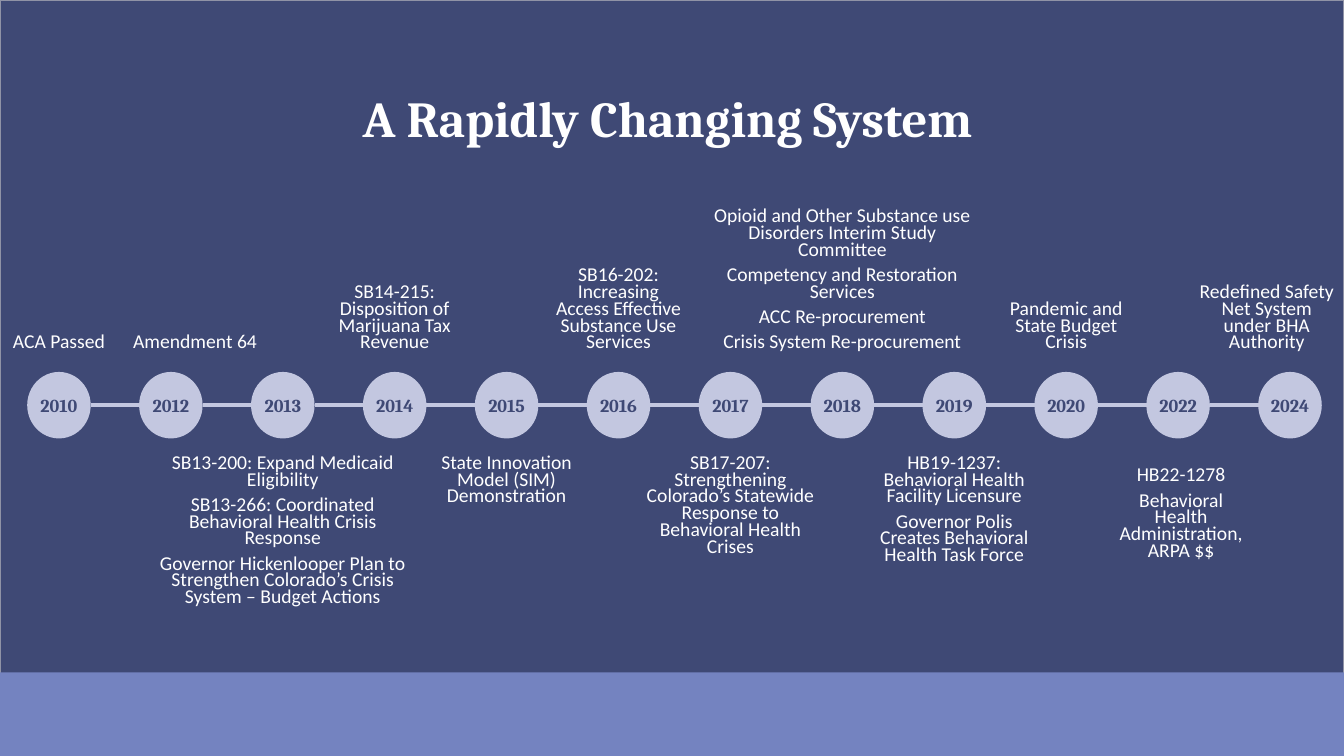
from dataclasses import dataclass

from lxml import etree
from pptx import Presentation
from pptx.dml.color import RGBColor
from pptx.enum import shapes, text
from pptx.oxml import ns
from pptx.util import Inches, Pt

NAVY = RGBColor(0x3F, 0x49, 0x75)
EDGE = RGBColor(0x90, 0x93, 0xA6)
PERIWINKLE = RGBColor(0x74, 0x83, 0xC0)
LAVENDER = RGBColor(0xC3, 0xC7, 0xE0)
WHITE = RGBColor(0xFF, 0xFF, 0xFF)

SLIDE_WIDTH, SLIDE_HEIGHT = 13.33, 7.5
BAND_HEIGHT = 0.83
CIRCLE_WIDTH, CIRCLE_HEIGHT = 0.63, 0.66
YEAR_STEP = 1.11

TOP, MIDDLE, BOTTOM = (text.MSO_ANCHOR.TOP, text.MSO_ANCHOR.MIDDLE,
                       text.MSO_ANCHOR.BOTTOM)
TITLE_FONT = {"name": "Cambria", "size": Pt(36), "bold": True}
YEAR_FONT = {"name": "Cambria", "size": Pt(13), "bold": True}
EVENT_FONT = {"name": "Calibri", "size": Pt(14)}
EVENT_SPACING = {"line_spacing": Pt(12), "space_after": Pt(6)}


@dataclass
class Event:
    """One year; top is measured from the top of the circles."""
    year: str
    lines: tuple
    top: float = -1.1
    height: float = 0.96
    width: float = 1.54
    anchor: int = BOTTOM
    shift: float = 0


def event_below(year, lines, width, height=1.14):
    return Event(year, lines, 0.79, height, width, TOP)


EVENTS = (
    Event("2010", ("ACA Passed",)),
    Event("2012", ("Amendment 64",), shift=0.24),
    event_below("2013", (
        "SB13-200: Expand Medicaid Eligibility",
        "SB13-266: Coordinated Behavioral Health Crisis Response",
        "Governor Hickenlooper Plan to Strengthen Colorado’s Crisis System – Budget Actions",
    ), 2.76, 1.61),
    Event("2014", ("SB14-215: Disposition of Marijuana Tax Revenue",)),
    event_below("2015", ("State Innovation Model (SIM) Demonstration",), 1.54),
    Event("2016", ("SB16-202: Increasing Access Effective Substance Use Services",)),
    event_below("2017", (
        "SB17-207: Strengthening Colorado’s Statewide Response to Behavioral Health Crises",
    ), 1.86),
    Event("2018", (
        "Opioid and Other Substance use Disorders Interim Study Committee",
        "Competency and Restoration Services",
        "ACC Re-procurement",
        "Crisis System Re-procurement",
    ), top=-1.75, height=1.61, width=2.8),
    event_below("2019", (
        "HB19-1237: Behavioral Health Facility Licensure",
        "Governor Polis Creates Behavioral Health Task Force",
    ), 1.86),
    Event("2020", ("Pandemic and State Budget Crisis",)),
    Event("2022", (
        "HB22-1278",
        "Behavioral Health Administration, ARPA $$",
    ), top=0.97, shift=0.03),
    Event("2024", ("Redefined Safety Net System under BHA Authority",), shift=-0.23),
)


def write_text(shape, lines, font, color, anchor, margins, spacing):
    frame = shape.text_frame
    frame.word_wrap = True
    frame.vertical_anchor = anchor
    for side, margin in zip(("left", "top", "right", "bottom"), margins):
        setattr(frame, f"margin_{side}", Inches(margin))
    for index, line in enumerate(lines):
        paragraph = frame.add_paragraph() if index else frame.paragraphs[0]
        paragraph.alignment = text.PP_ALIGN.CENTER
        for name, value in spacing.items():
            setattr(paragraph, name, value)
        run = paragraph.add_run()
        run.text = line
        for name, value in font.items():
            setattr(run.font, name, value)
        run.font.color.rgb = color


def add_filled(slide, kind, box, fill, edge=None):
    shape = slide.shapes.add_shape(kind, *map(Inches, box))
    shape.shadow.inherit = False
    shape.fill.solid()
    shape.fill.fore_color.rgb = fill
    if edge is None:
        shape.line.fill.background()
    else:
        shape.line.color.rgb = edge
        shape.line.width = Pt(1)
    return shape


def add_backdrop(slide, left, top, width, height):
    rectangle = shapes.MSO_SHAPE.RECTANGLE
    add_filled(slide, rectangle, (left, top, width, height), NAVY, EDGE)
    band_top = top + height - BAND_HEIGHT
    add_filled(slide, rectangle, (left, band_top, width, BAND_HEIGHT), PERIWINKLE)


def add_title(slide, left, top, width, height):
    title = slide.shapes.add_textbox(*map(Inches, (left, top, width, height)))
    write_text(title, ["A Rapidly Changing System"], TITLE_FONT, WHITE, MIDDLE,
               (0, 0.05, 0.1, 0.05), {"line_spacing": 0.9})


def add_link(slide, left, right, middle):
    """Draw the line between two neighbouring circles."""
    link = slide.shapes.add_connector(
        shapes.MSO_CONNECTOR.STRAIGHT, *map(Inches, (left, middle, right, middle)))
    link.line.color.rgb = LAVENDER
    link.line.width = Pt(3)
    etree.SubElement(link._element.spPr, ns.qn("a:effectLst"))


def add_event(slide, event, left, top):
    circle = add_filled(slide, shapes.MSO_SHAPE.OVAL,
                        (left, top, CIRCLE_WIDTH, CIRCLE_HEIGHT), LAVENDER)
    write_text(circle, [event.year], YEAR_FONT, NAVY, MIDDLE, (0, 0, 0, 0), {})
    label_left = left + (CIRCLE_WIDTH - event.width) / 2 + event.shift
    label = slide.shapes.add_textbox(*map(Inches, (
        label_left, top + event.top, event.width, event.height)))
    write_text(label, event.lines, EVENT_FONT, WHITE, event.anchor,
               (0.1, 0.05, 0.1, 0.05), EVENT_SPACING)


def add_timeline(slide, left, top):
    for index, event in enumerate(EVENTS):
        circle_left = left + index * YEAR_STEP
        if index:
            add_link(slide, circle_left - YEAR_STEP + CIRCLE_WIDTH,
                     circle_left + 0.02, top + CIRCLE_HEIGHT / 2)
        add_event(slide, event, circle_left, top)


def main():
    presentation = Presentation()
    presentation.slide_width = Inches(SLIDE_WIDTH)
    presentation.slide_height = Inches(SLIDE_HEIGHT)
    slide = presentation.slides.add_slide(presentation.slide_layouts[6])
    add_backdrop(slide, 0, 0, SLIDE_WIDTH, SLIDE_HEIGHT)
    add_title(slide, 2.48, 0.73, 8.38, 0.95)
    add_timeline(slide, 0.27, 3.69)
    presentation.save("out.pptx")


if __name__ == "__main__":
    main()
